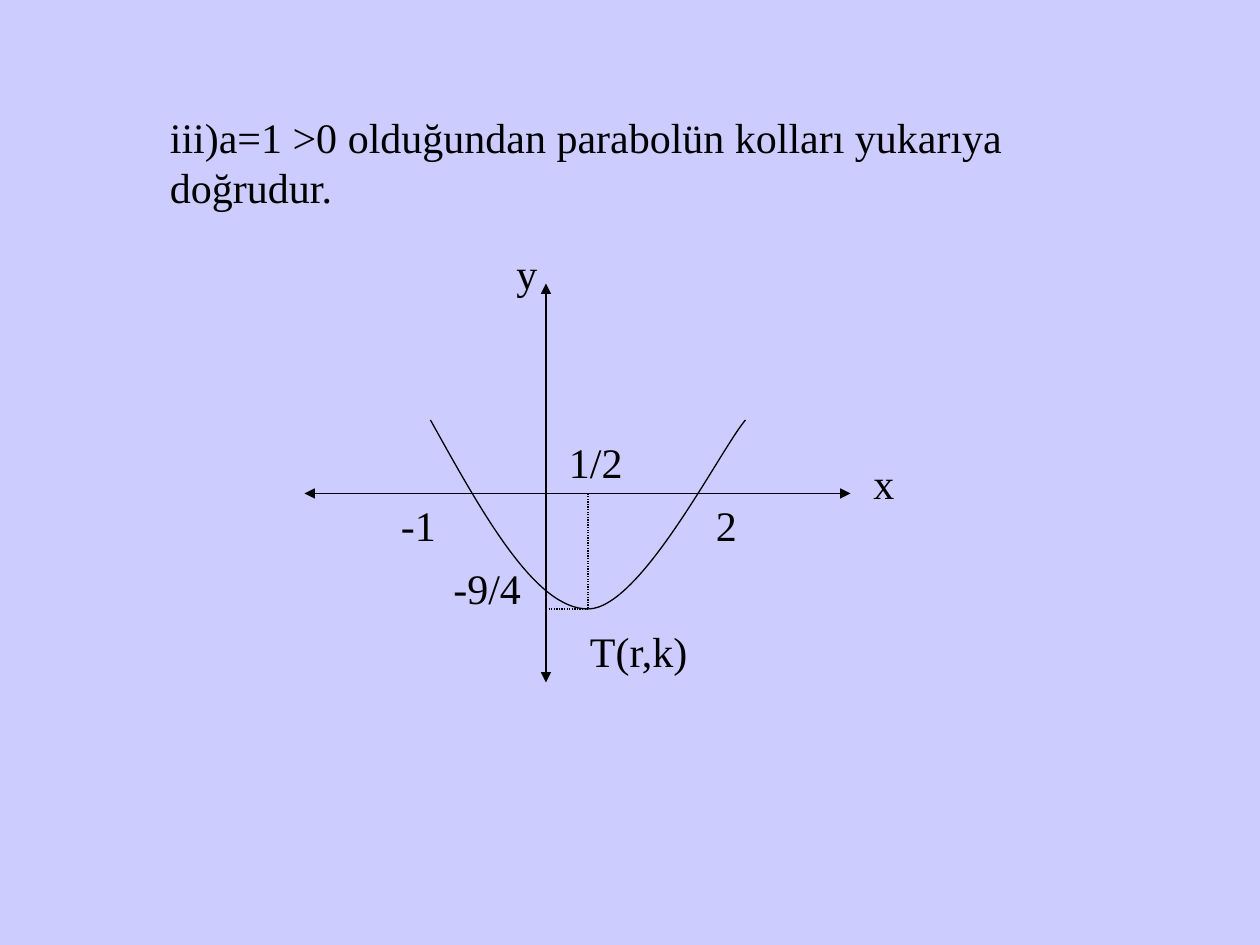
import pptx
import pptx.dml.color
import pptx.enum.dml
import pptx.enum.shapes
import pptx.enum.text
import pptx.oxml
import pptx.oxml.ns
import pptx.util

PX = 9525
COLORS = {"background": "CCCCFF", "ink": "000000"}
INK = pptx.dml.color.RGBColor.from_string(COLORS["ink"])

deck = pptx.Presentation()
deck.slide_width = 960 * PX
deck.slide_height = 720 * PX
slide = deck.slides.add_slide(deck.slide_layouts[6])
slide.background.fill.solid()
slide.background.fill.fore_color.rgb = pptx.dml.color.RGBColor.from_string(COLORS["background"])


def add_text(wording, left, top, width, height=48):
    box = slide.shapes.add_textbox(left * PX, top * PX, width * PX, height * PX)
    frame = box.text_frame
    frame.text = wording
    frame.word_wrap = True
    frame.auto_size = pptx.enum.text.MSO_AUTO_SIZE.SHAPE_TO_FIT_TEXT
    font = frame.paragraphs[0].runs[0].font
    font.name = "Times New Roman"
    font.size = pptx.util.Pt(24)
    font.color.rgb = INK


def add_line(x1, y1, x2, y2, dotted=False):
    segment = slide.shapes.add_connector(
        pptx.enum.shapes.MSO_CONNECTOR.STRAIGHT, x1 * PX, y1 * PX, x2 * PX, y2 * PX)
    segment.line.color.rgb = INK
    segment.line.width = pptx.util.Pt(0.75)
    properties = segment._element.spPr
    if dotted:
        segment.line.dash_style = pptx.enum.dml.MSO_LINE.ROUND_DOT
    else:
        outline = properties.find(pptx.oxml.ns.qn("a:ln"))
        outline.append(pptx.oxml.parse_xml(
            f'<a:tailEnd {pptx.oxml.ns.nsdecls("a")} type="triangle"/>'))
    properties.append(pptx.oxml.parse_xml(f'<a:effectLst {pptx.oxml.ns.nsdecls("a")}/>'))


add_text("iii)a=1 >0 olduğundan parabolün kolları yukarıya doğrudur.", 120, 80, 744, 86)

origin_x, origin_y = 416, 376
vertex_x, vertex_y = 448, 464

add_line(origin_x, 232, origin_x, 520)
add_line(240, origin_y, 648, origin_y)
add_line(272, origin_y, 232, origin_y)
add_line(origin_x, 248, origin_x, 216)

left_arm = [(368, 392), (408, vertex_y), (vertex_x, vertex_y)]
right_arm = [(488, vertex_y), (548, 344), (568, 320)]
builder = slide.shapes.build_freeform(328, 320, scale=PX)
builder.add_line_segments(left_arm + right_arm, close=False)
parabola = builder.convert_to_shape()
parabola.shadow.inherit = False
parabola.fill.background()
parabola.line.color.rgb = INK
parabola.line.width = pptx.util.Pt(0.75)

outline_path = parabola._element.spPr.find(".//" + pptx.oxml.ns.qn("a:path"))
steps = outline_path.findall(pptx.oxml.ns.qn("a:lnTo"))
for start in range(0, len(steps), 3):
    curve = pptx.oxml.parse_xml(f'<a:cubicBezTo {pptx.oxml.ns.nsdecls("a")}/>')
    for step in steps[start:start + 3]:
        curve.append(step[0])
        outline_path.remove(step)
    outline_path.append(curve)

add_line(vertex_x, origin_y, vertex_x, vertex_y, dotted=True)
add_line(origin_x, vertex_y, vertex_x, vertex_y, dotted=True)

labels = [
    ("2", 536, 376, 64),
    ("-1", 296, 376, 56),
    ("-9/4", 336, 424, 112),
    ("1/2", 424, 328, 80),
    ("x", 656, 344, 40),
    ("y", 384, 184, 96),
    ("T(r,k)", 440, 472, 112),
]
for wording, left, top, width in labels:
    add_text(wording, left, top, width)

deck.save("out.pptx")
